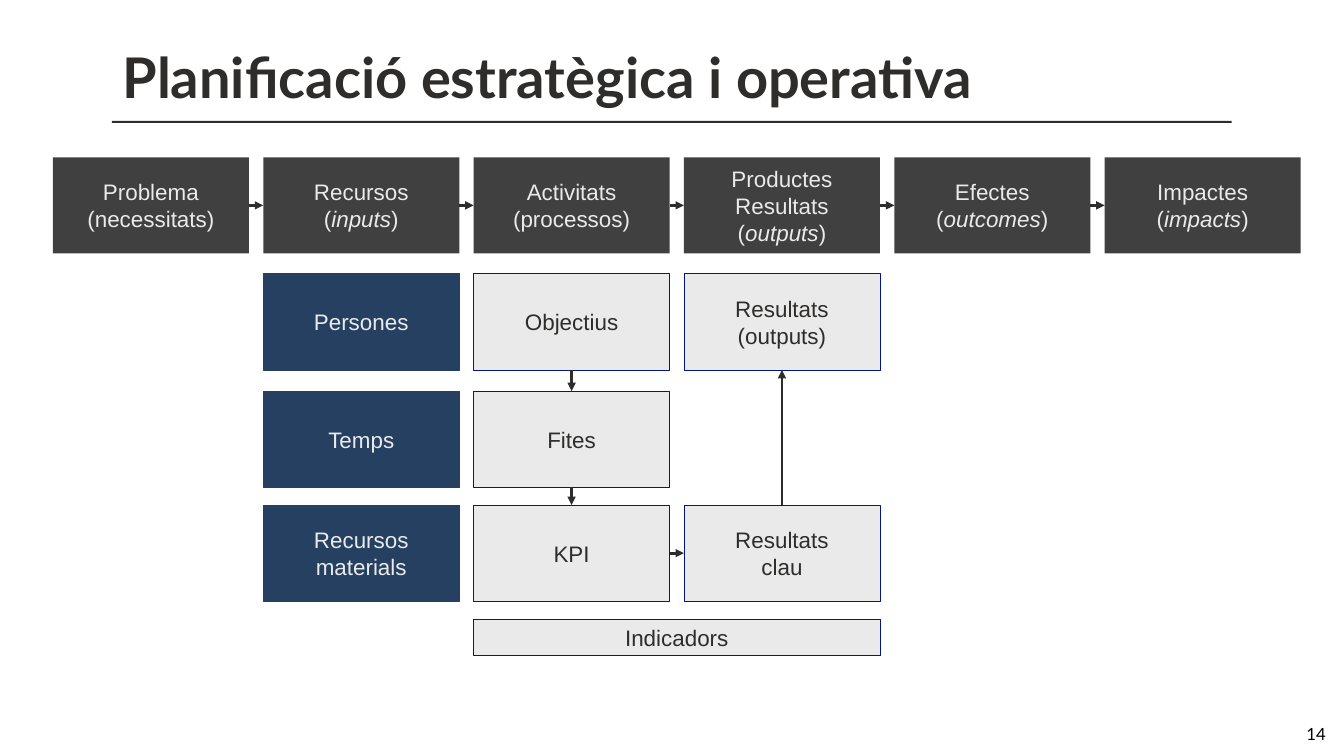
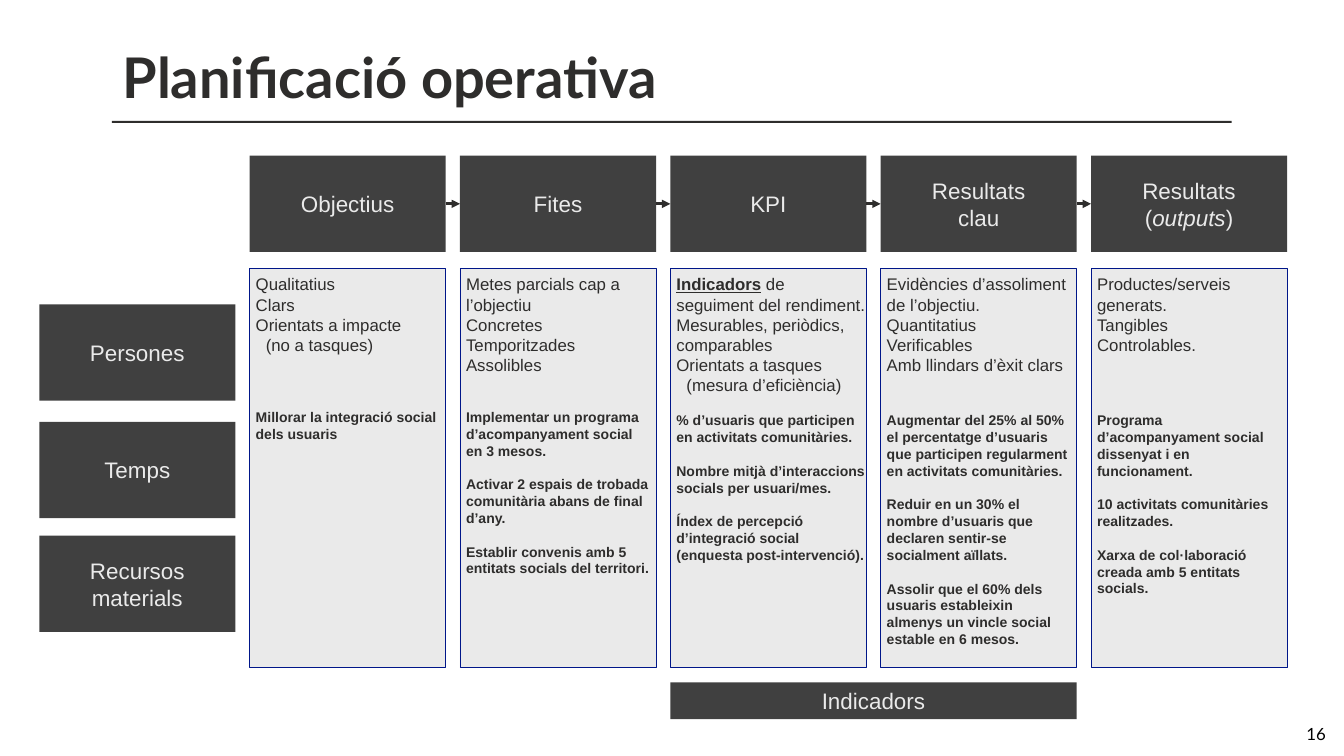
from dataclasses import dataclass

from lxml import etree
from pptx import Presentation
from pptx import util as u
from pptx.dml.color import RGBColor
from pptx.enum import shapes, text
from pptx.oxml.ns import qn


@dataclass(frozen=True)
class Theme:
    ink: str = "2E2D2C"
    black: str = "000000"
    dark: str = "404040"
    navy: str = "254061"
    pale: str = "EAEAEA"
    edge: str = "001689"
    title_font: str = "Lato"
    body_font: str = "Arial"
    title_size: int = 80
    box_size: int = 32
    trait_size: int = 24
    example_size: int = 20
    leading: float = 1.2
    arrow_width: int = 4


THEME = Theme()


@dataclass(frozen=True)
class Look:
    fill: str
    color: str
    edge: str | None = None
    inset: float = 0.1


STAGE = Look(THEME.dark, THEME.pale)
RESOURCE = Look(THEME.navy, THEME.pale, THEME.navy)
DETAIL = Look(THEME.pale, THEME.ink, THEME.edge, 0.12)


@dataclass(frozen=True)
class Grid:
    left: float
    tops: tuple[float, ...]
    pitch: float = 4.174
    width: float = 3.89
    height: float = 1.91
    strip: float = 0.73
    panel: float = 7.93

    def place(self, column: int, row: int, span: int = 1, height: float | None = None):
        return [u.Inches(n) for n in (
            self.left + column * self.pitch, self.tops[row],
            self.width + (span - 1) * self.pitch, height or self.height)]


@dataclass(frozen=True)
class Box:
    lines: tuple[str, ...]
    column: int
    row: int
    look: Look = STAGE
    span: int = 1
    height: float | None = None


@dataclass(frozen=True)
class Panel:
    heading: tuple[str, ...]
    traits: tuple[str, ...]
    examples: tuple[str, ...]
    gap: float
    right_inset: float = DETAIL.inset


def rgb(value: str) -> RGBColor:
    return RGBColor.from_string(value)


def set_font(font, name: str, size: int, color: str, bold: bool = False) -> None:
    font.name, font.size, font.bold = name, u.Pt(size), bold
    font.color.rgb = rgb(color)


def set_insets(frame, side: float, end: float, right: float | None = None) -> None:
    frame.margin_left = u.Inches(side)
    frame.margin_right = u.Inches(side if right is None else right)
    frame.margin_top = frame.margin_bottom = u.Inches(end)


def write_line(frame, index: int, content: str, size: int, color: str, align,
               bold: bool = False, before: float = 0, strong: bool = False) -> None:
    paragraph = frame.paragraphs[0] if index == 0 else frame.add_paragraph()
    paragraph.alignment = align
    paragraph.line_spacing = u.Pt(size * THEME.leading)
    paragraph.space_before = u.Pt(before)
    if content.startswith("\t"):
        stops = etree.SubElement(paragraph._p.get_or_add_pPr(), qn("a:tabLst"))
        etree.SubElement(stops, qn("a:tab"), pos=str(u.Inches(0.2)), algn="l")
    set_font(paragraph.font, THEME.body_font, size, color, bold)
    for position, part in enumerate(content.split("_")):
        if not part:
            continue
        run = paragraph.add_run()
        run.text = part
        if position % 2 and strong:
            run.font.bold = run.font.underline = True
        elif position % 2:
            run.font.italic = True


def add_rectangle(slide, place, look: Look):
    rectangle = slide.shapes.add_shape(shapes.MSO_SHAPE.RECTANGLE, *place)
    rectangle.shadow.inherit = False
    rectangle.fill.solid()
    rectangle.fill.fore_color.rgb = rgb(look.fill)
    if look.edge:
        rectangle.line.color.rgb = rgb(look.edge)
        rectangle.line.width = u.Pt(1)
    else:
        rectangle.line.fill.background()
    rectangle.text_frame.word_wrap = True
    return rectangle


def add_box(slide, grid: Grid, box: Box):
    rectangle = add_rectangle(
        slide, grid.place(box.column, box.row, box.span, box.height), box.look)
    frame = rectangle.text_frame
    frame.vertical_anchor = text.MSO_ANCHOR.MIDDLE
    set_insets(frame, box.look.inset, 0.05)
    for index, line in enumerate(box.lines):
        write_line(frame, index, line, THEME.box_size, box.look.color, text.PP_ALIGN.CENTER)
    return rectangle


def add_panel(slide, grid: Grid, column: int, panel: Panel) -> None:
    frame = add_rectangle(
        slide, grid.place(column, 1, height=grid.panel), DETAIL).text_frame
    frame.vertical_anchor = text.MSO_ANCHOR.TOP
    set_insets(frame, DETAIL.inset, DETAIL.inset, panel.right_inset)
    for index, trait in enumerate(panel.traits):
        write_line(frame, index, trait, THEME.trait_size, DETAIL.color,
                   text.PP_ALIGN.LEFT, strong=True)
    for index, example in enumerate(panel.examples):
        before = THEME.example_size * THEME.leading if index else panel.gap
        write_line(frame, len(panel.traits) + index, example, THEME.example_size,
                   DETAIL.color, text.PP_ALIGN.LEFT, bold=True, before=before)


def add_arrow(slide, source, target, source_side: int = 3, target_side: int = 1) -> None:
    arrow = slide.shapes.add_connector(shapes.MSO_CONNECTOR.STRAIGHT, 0, 0, 0, 0)
    arrow.begin_connect(source, source_side)
    arrow.end_connect(target, target_side)
    arrow.line.color.rgb = rgb(THEME.ink)
    arrow.line.width = u.Pt(THEME.arrow_width)
    etree.SubElement(arrow.line._get_or_add_ln(), qn("a:tailEnd"), type="triangle")
    etree.SubElement(arrow._element.spPr, qn("a:effectLst"))


def add_chain(slide, boxes) -> None:
    for source, target in zip(boxes, boxes[1:]):
        add_arrow(slide, source, target)


def start_slide(deck, heading: str, number: int):
    slide = deck.slides.add_slide(deck.slide_layouts[5])
    add_rectangle(slide, [u.Inches(n) for n in (2.22, 2.4, 22.22, 0.04)],
                  Look(THEME.ink, THEME.ink))

    title = slide.shapes.title
    title.left, title.top, title.width, title.height = (
        u.Inches(n) for n in (2.23, 0.73, 22.22, 1.57))
    page = slide.shapes.add_textbox(*(u.Inches(n) for n in (23.41, 14.35, 3, 0.4)))
    for holder, content, size, color, align, side in (
            (title, heading, THEME.title_size, THEME.ink, text.PP_ALIGN.LEFT, 0.2),
            (page, str(number), THEME.trait_size, THEME.black, text.PP_ALIGN.RIGHT, 0.1)):
        frame = holder.text_frame
        frame.text = content
        frame.word_wrap = True
        frame.auto_size = text.MSO_AUTO_SIZE.NONE
        frame.vertical_anchor = text.MSO_ANCHOR.MIDDLE
        set_insets(frame, side, 0.1)
        frame.paragraphs[0].alignment = align
        set_font(frame.paragraphs[0].font, THEME.title_font, size, color, holder is title)
    return slide


RESOURCES = ("Persones", "Temps", "Recursos materials")

STAGES = (
    ("Problema", "(necessitats)"),
    ("Recursos", "(_inputs_)"),
    ("Activitats", "(processos)"),
    ("Productes", "Resultats", "(_outputs_)"),
    ("Efectes (_outcomes_)",),
    ("Impactes", "(_impacts_)"),
)

PANELS = (
    Panel(("Objectius",),
          ("Qualitatius", "Clars", "Orientats a impacte", "\t(no a tasques)"),
          ("Millorar la integració social dels usuaris",), 76.8),
    Panel(("Fites",),
          ("Metes parcials cap a l’objectiu", "Concretes", "Temporitzades Assolibles"),
          ("Implementar un programa d’acompanyament social en 3 mesos.",
           "Activar 2 espais de trobada comunitària abans de final d’any.",
           "Establir convenis amb 5 entitats socials del territori."), 48),
    Panel(("KPI",),
          ("_Indicadors_ de seguiment del rendiment.", "Mesurables, periòdics, comparables",
           "Orientats a tasques", "\t(mesura d’eficiència)"),
          ("% d’usuaris que participen en activitats comunitàries.",
           "Nombre mitjà d’interaccions socials per usuari/mes.",
           "Índex de percepció d’integració social (enquesta post-intervenció)."), 24, 0),
    Panel(("Resultats", "clau"),
          ("Evidències d’assoliment de l’objectiu.", "Quantitatius", "Verificables",
           "Amb llindars d’èxit clars"),
          ("Augmentar del 25% al 50% el percentatge d’usuaris que participen "
           "regularment en activitats comunitàries.",
           "Reduir en un 30% el nombre d’usuaris que declaren sentir-se socialment aïllats.",
           "Assolir que el 60% dels usuaris estableixin almenys un vincle social "
           "estable en 6 mesos."), 52.8),
    Panel(("Resultats (_outputs_)",),
          ("Productes/serveis generats.", "Tangibles", "Controlables."),
          ("Programa d’acompanyament social dissenyat i en funcionament.",
           "10 activitats comunitàries realitzades.",
           "Xarxa de col·laboració creada amb 5 entitats socials."), 81.6),
)


def build_strategy(deck) -> None:
    slide = start_slide(deck, "Planificació estratègica i operativa", 14)
    grid = Grid(1.05, (3.12, 5.43, 7.76, 10.02, 12.28))
    add_chain(slide, [add_box(slide, grid, Box(lines, column, 0))
                      for column, lines in enumerate(STAGES)])
    for row, resource in enumerate(RESOURCES, 1):
        add_box(slide, grid, Box((resource,), 1, row, RESOURCE))
    goals, milestones, kpi, outputs, key_results = (
        add_box(slide, grid, Box(lines, column, row, DETAIL))
        for lines, column, row in (
            (("Objectius",), 2, 1), (("Fites",), 2, 2), (("KPI",), 2, 3),
            (("Resultats (outputs)",), 3, 1), (("Resultats", "clau"), 3, 3)))
    add_box(slide, grid, Box(("Indicadors",), 2, 4, DETAIL, 2, grid.strip))
    add_arrow(slide, goals, milestones, 2, 0)
    add_arrow(slide, milestones, kpi, 2, 0)
    add_arrow(slide, kpi, key_results)
    add_arrow(slide, key_results, outputs, 0, 2)


def build_operations(deck) -> None:
    slide = start_slide(deck, "Planificació operativa", 16)
    grid = Grid(0.78, (3.09, 5.32, 6.04, 8.37, 10.63, 13.54))
    add_chain(slide, [add_box(slide, grid, Box(panel.heading, column, 0))
                      for column, panel in enumerate(PANELS, 1)])
    for column, panel in enumerate(PANELS, 1):
        add_panel(slide, grid, column, panel)
    for row, resource in enumerate(RESOURCES, 2):
        add_box(slide, grid, Box((resource,), 0, row))
    add_box(slide, grid, Box(("Indicadors",), 3, 5, STAGE, 2, grid.strip))


def main() -> None:
    deck = Presentation()
    deck.slide_width, deck.slide_height = u.Inches(26.67), u.Inches(15)
    build_strategy(deck)
    build_operations(deck)
    deck.save("out.pptx")


if __name__ == "__main__":
    main()
